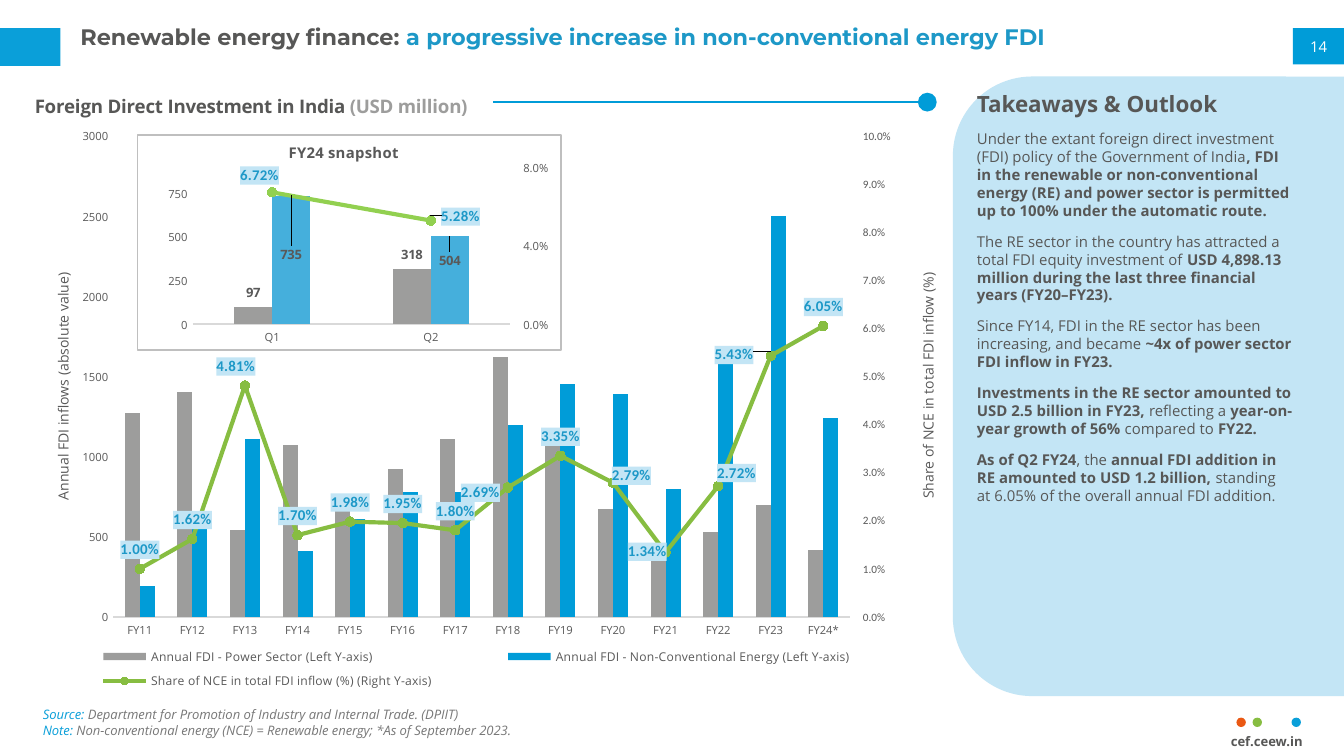
import copy

import pptx
import pptx.chart.axis
import pptx.chart.data
import pptx.dml.color
import pptx.enum.chart
import pptx.enum.shapes
import pptx.enum.text
import pptx.oxml
import pptx.oxml.ns
import pptx.util

Pt = pptx.util.Pt
RGB = pptx.dml.color.RGBColor.from_string
qn = pptx.oxml.ns.qn
NS = pptx.oxml.ns.nsdecls("c", "a")
SHAPE = pptx.enum.shapes.MSO_SHAPE
XL = pptx.enum.chart


class Theme:
    body, heading, figures = "Open Sans", "Montserrat", "Calibri"
    blue, sky, title_blue, pale = "009CD8", "0A9FD9", "1D98C7", "C3E5F5"
    green, lime, orange, light_blue = "87BD41", "92D050", "EA5813", "45AFDC"
    dark, axis, muted, grey = "575756", "595959", "787878", "9D9D9C"
    border, rule, white = "BFBFBF", "D9D9D9", "FFFFFF"
    h1, h2, text, axis_title, small, legend, tick = 12, 10, 8, 7.5, 7, 6.5, 6


T = Theme
prs = pptx.Presentation()
prs.slide_width, prs.slide_height = pptx.util.Inches(10), pptx.util.Inches(5.625)
s = prs.slides.add_slide(prs.slide_layouts[6])


def grid(*at):
    """Turn percentages of the slide's width and height, in turn, into lengths."""
    return [round(v * (prs.slide_height if i % 2 else prs.slide_width) / 100) for i, v in enumerate(at)]


def combo_chart(at, cats, series, title, title_at, plot_at, gap, left, right, label_size, area):
    """Clustered columns on the left axis, with the last series as a line on the right one."""
    data = pptx.chart.data.CategoryChartData()
    data.categories = cats
    for name, values, *_ in series:
        data.add_series(name, values)
    chart = s.shapes.add_chart(XL.XL_CHART_TYPE.COLUMN_CLUSTERED, *grid(*at), data).chart
    chart.font.size, chart.font.name, chart.font.color.rgb = Pt(T.text), T.body, RGB(T.axis)
    chart.has_legend = False
    root = chart._chartSpace
    plot_area = root.find(".//" + qn("c:plotArea"))
    root.find(qn("c:chart")).addnext(pptx.oxml.parse_xml(f"<c:spPr {NS}>{area}</c:spPr>"))

    # Move the last series to a line plot with its own pair of axes
    bars = plot_area.find(qn("c:barChart"))
    line = pptx.oxml.parse_xml(
        f'<c:lineChart {NS}><c:grouping val="standard"/><c:varyColors val="0"/>'
        '<c:marker val="1"/><c:axId val="50"/><c:axId val="60"/></c:lineChart>')
    ser = bars.findall(qn("c:ser"))[-1]
    for el in ser.findall(qn("c:invertIfNegative")):
        ser.remove(el)
    line.insert(2, ser)
    bars.addnext(line)
    last = plot_area.find(qn("c:valAx"))
    for tag, own, other, changes in (
            ("c:valAx", "60", "50", {"c:axPos": "r", "c:crosses": "max"}),
            ("c:catAx", "50", "60", {"c:delete": "1"})):
        ax = copy.deepcopy(plot_area.find(qn(tag)))
        for child, value in {"c:axId": own, "c:crossAx": other, **changes}.items():
            ax.find(qn(child)).set("val", value)
        last.addnext(ax)
        last = ax

    layouts = [(plot_area, 0, plot_at)]
    left_axis, right_axis = map(pptx.chart.axis.ValueAxis, plot_area.findall(qn("c:valAx")))
    for axis, (top, step, fmt, font, text, text_at) in ((left_axis, left), (right_axis, right)):
        axis.minimum_scale, axis.maximum_scale, axis.major_unit = 0, top, step
        axis.has_major_gridlines = False
        axis.tick_labels.number_format, axis.tick_labels.number_format_is_linked = fmt, False
        axis.tick_labels.font.name = font
        axis.format.line.fill.background()
        if text:
            tf = axis.axis_title.text_frame
            tf.text = text
            f = tf.paragraphs[0].runs[0].font
            f.size, f.bold, f.name, f.color.rgb = Pt(T.axis_title), False, T.body, RGB(T.axis)
            title_el = axis.axis_title._element
            title_el.find(".//" + qn("a:bodyPr")).set("rot", "-5400000")
            layouts.append((title_el, 1, text_at))
    chart.category_axis.format.line.color.rgb = RGB(T.rule)
    for axis in (chart.category_axis, left_axis, right_axis):
        axis.major_tick_mark = XL.XL_TICK_MARK.OUTSIDE if axis is right_axis else XL.XL_TICK_MARK.NONE
        axis.tick_labels.font.size = Pt(T.tick)
        axis.tick_labels.font.color.rgb = RGB(T.axis)

    p = chart.chart_title.text_frame.paragraphs[0]
    for text, size, color in title:
        r = p.add_run()
        r.text = text
        r.font.size, r.font.bold, r.font.name, r.font.color.rgb = Pt(size), True, T.body, RGB(color)
    layouts.append((chart.chart_title._element, 1, title_at))

    columns, trend = chart.plots
    columns.gap_width, columns.overlap = gap, 0
    columns.vary_by_categories = False
    for sr, (_, _, color, shifts) in zip([*columns.series, *trend.series], series):
        is_line = sr._element is ser
        if is_line:
            sr.smooth = False
            sr.format.line.color.rgb, sr.format.line.width = RGB(color), Pt(2.25)
            sr.marker.style, sr.marker.size = XL.XL_MARKER_STYLE.CIRCLE, 5
            sr.marker.format.fill.solid()
            sr.marker.format.fill.fore_color.rgb = RGB(color)
            sr.marker.format.line.color.rgb = RGB(color)
        else:
            sr.format.fill.solid()
            sr.format.fill.fore_color.rgb = RGB(color)
        if shifts is None:
            continue
        labels = sr.data_labels
        labels.show_value = True
        labels.number_format, labels.number_format_is_linked = "0.00%" if is_line else "0", False
        labels.position = XL.XL_LABEL_POSITION.ABOVE if is_line else XL.XL_LABEL_POSITION.OUTSIDE_END
        f = labels.font
        f.bold, f.size = True, Pt(T.text if is_line else label_size)
        f.name, f.color.rgb = (T.figures, RGB(T.title_blue)) if is_line else (T.body, RGB(T.axis))
        dlbls = labels._element
        for leader in dlbls.findall(qn("c:showLeaderLines")):
            dlbls.remove(leader)
        if is_line:
            dlbls.find(qn("c:numFmt")).addnext(pptx.oxml.parse_xml(
                f'<c:spPr {NS}><a:solidFill><a:srgbClr val="{T.pale}"/></a:solidFill></c:spPr>'))
        shared = list(dlbls)
        for i, (point, shift) in enumerate(shifts.items()):
            label = pptx.oxml.parse_xml(f'<c:dLbl {NS}><c:idx val="{point}"/></c:dLbl>')
            label.extend(copy.deepcopy(shared))
            dlbls.insert(i, label)
            layouts.append((label, 1, shift))

    if len(cats) > 2:
        chart.has_legend = True
        chart.legend.position = XL.XL_LEGEND_POSITION.BOTTOM
        chart.legend.include_in_layout = False
        f = chart.legend.font
        f.size, f.name, f.color.rgb = Pt(T.legend), T.body, RGB(T.axis)
        layouts.append((chart.legend._element, 1, (0.01, 0.91, 0.97, 0.09)))

    for parent, index, place in layouts:
        for old in parent.findall(qn("c:layout")):
            parent.remove(old)
        target = '<c:layoutTarget val="inner"/>' if parent is plot_area else ""
        modes = "" if parent.tag == qn("c:dLbl") else '<c:xMode val="edge"/><c:yMode val="edge"/>'
        values = "".join(f'<c:{k} val="{v}"/>' for k, v in zip("xywh", place))
        parent.insert(index, pptx.oxml.parse_xml(
            f"<c:layout {NS}><c:manualLayout>{target}{modes}{values}</c:manualLayout></c:layout>"))


combo_chart(
    (1.6, 11.56, 68.5, 80.53), [f"FY{y}" for y in range(11, 24)] + ["FY24*"],
    [("Annual FDI - Power Sector (Left Y-axis)",
      [1270, 1400, 540, 1070, 660, 920, 1110, 1620, 1110, 670, 370, 530, 700, 420], T.grey, None),
     ("Annual FDI - Non-Conventional Energy (Left Y-axis)",
      [190, 660, 1110, 410, 610, 780, 780, 1200, 1450, 1390, 800, 1600, 2500, 1240], T.blue, None),
     ("Share of NCE in total FDI inflow (%) (Right Y-axis)",
      [0.01, 0.0162, 0.0481, 0.017, 0.0198, 0.0195, 0.018, 0.0269, 0.0335, 0.0279, 0.0134, 0.0272,
       0.0543, 0.0605], T.green,
      {2: (-0.01, 0), 7: (-0.03, 0.04), 9: (0.02, 0.02), 10: (-0.02, 0.03), 11: (0.02, 0.01),
       12: (-0.04, 0.03)})],
    [("Foreign Direct Investment in India ", T.h2, T.dark), ("(USD million)", T.h2, T.grey)],
    (0.01, 0), (0.1, 0.08, 0.8, 0.79), 150,
    (3000, 500, "General", T.body, "Annual FDI inflows (absolute value)", (0.03, 0.3)),
    (0.1, 0.01, "0.0%", T.figures, "Share of NCE in total FDI inflow (%)", (0.97, 0.3)),
    T.small, "<a:noFill/><a:ln><a:noFill/></a:ln>")

for kind, at, color in (
        (SHAPE.RECTANGLE, (0, 3.73, 4.5, 4.98), T.sky),
        (SHAPE.ROUNDED_RECTANGLE, (70.9, 10.13, 35.4, 81.96), T.pale),
        (SHAPE.RECTANGLE, (96.2, 3.73, 8.9, 4.8), T.blue),
        (SHAPE.OVAL, (96.1, 94.93, 0.7, 1.24), T.sky),
        (SHAPE.OVAL, (93.2, 94.93, 0.7, 1.24), T.green),
        (SHAPE.OVAL, (92, 94.93, 0.7, 1.24), T.orange),
        (SHAPE.OVAL, (68.3, 12.27, 1.4, 2.49), T.blue)):
    sp = s.shapes.add_shape(kind, *grid(*at))
    sp.shadow.inherit = False
    sp.fill.solid()
    sp.fill.fore_color.rgb = RGB(color)
    sp.line.fill.background()

rule = s.shapes.add_connector(pptx.enum.shapes.MSO_CONNECTOR.STRAIGHT, *grid(36.7, 13.51, 68.3, 13.51))
rule.line.color.rgb, rule.line.width = RGB(T.blue), Pt(0.75)
rule._element.spPr.append(pptx.oxml.parse_xml(f"<a:effectLst {NS}/>"))

# Run styles: font, size, colour, bold, italic
title_dark, title_blue = [(T.heading, T.h1, c, True, False) for c in (T.dark, T.title_blue)]
head, plain, bold = [(T.body, z, T.dark, b, False) for z, b in ((T.h1, True), (T.text, False), (T.text, True))]
tag, credit = [(T.body, T.small, c, False, True) for c in (T.sky, T.muted)]
number, web = (T.body, T.text, T.white, False, False), (T.body, T.small, T.dark, True, False)

# Box, top inset in inches, space before, paragraphs of runs
for at, inset, before, paragraphs in (
        ((5, 2.67, 90, 9.4), 0.02, 0, [
            [("Renewable energy finance: ", title_dark),
             ("a progressive increase in non-conventional energy FDI", title_blue)]]),
        ((96.5, 4.09, 3.5, 4.27), 0.05, 0, [[("14", number)]]),
        ((90.6, 96.2, 7.8, 3.6), 0.05, 0, [[("cef.ceew.in", web)]]),
        ((71.7, 10.13, 25.5, 80.7), 0.1, 7, [
            [("Takeaways & Outlook", head)],
            [("Under the extant foreign direct investment (FDI) policy of the Government of India", plain),
             (", FDI in the renewable or non-conventional energy (RE) and power sector is permitted "
              "up to 100% under the automatic route.", bold)],
            [("The RE sector in the country has attracted a total FDI equity investment of ", plain),
             ("USD 4,898.13 million during the last three financial years (FY20–FY23).", bold)],
            [("Since FY14, FDI in the RE sector has been increasing, and became ", plain),
             ("~4x of power sector FDI inflow in FY23.", bold)],
            [("Investments in the RE sector amounted to USD 2.5 billion in FY23, ", bold),
             ("reflecting a ", plain), ("year-on-year growth of 56% ", bold),
             ("compared to ", plain), ("FY22.", bold)],
            [("As of Q2 FY24", bold), (", the", plain),
             (" annual FDI addition in RE amounted to USD 1.2 billion, ", bold),
             ("standing at 6.05% of the overall annual FDI addition.", plain)]]),
        ((2.2, 92.6, 85, 7.1), 0.05, 0, [
            [("Source: ", tag), ("Department for Promotion of Industry and Internal Trade. (DPIIT)", credit)],
            [("Note: ", tag),
             ("Non-conventional energy (NCE) = Renewable energy; *As of September 2023.", credit)]])):
    tf = s.shapes.add_textbox(*grid(*at)).text_frame
    tf.word_wrap = True
    tf.margin_top, tf.margin_bottom = pptx.util.Inches(inset), 0
    for i, runs in enumerate(paragraphs):
        p = tf.add_paragraph() if i else tf.paragraphs[0]
        p.space_before = Pt(before if i else 0)
        for text, style in runs:
            r = p.add_run()
            r.text = text
            r.font.name, r.font.size, color, r.font.bold, r.font.italic = style[0], Pt(style[1]), *style[2:]
            r.font.color.rgb = RGB(color)

combo_chart(
    (10.2, 17.78, 31.6, 28.62), ["Q1", "Q2"],
    [("Series 1", [97, 318], T.grey, {}),
     ("Series 2", [735, 504], T.light_blue, {0: (0, 0.34), 1: (0, 0.18)}),
     ("Series 3", [0.0672, 0.0528], T.lime, {0: (-0.03, 0.01), 1: (0.07, 0.07)})],
    [("FY24 snapshot", T.text, T.axis)], (0.35, 0.01), (0.13, 0.15, 0.75, 0.73), 219,
    (900, 250, "General", T.body, "", None), (0.08, 0.04, "0.0%", T.body, "", None), T.small,
    f'<a:solidFill><a:srgbClr val="{T.white}"/></a:solidFill><a:ln w="9525">'
    f'<a:solidFill><a:srgbClr val="{T.border}"/></a:solidFill></a:ln>')

prs.save("out.pptx")
